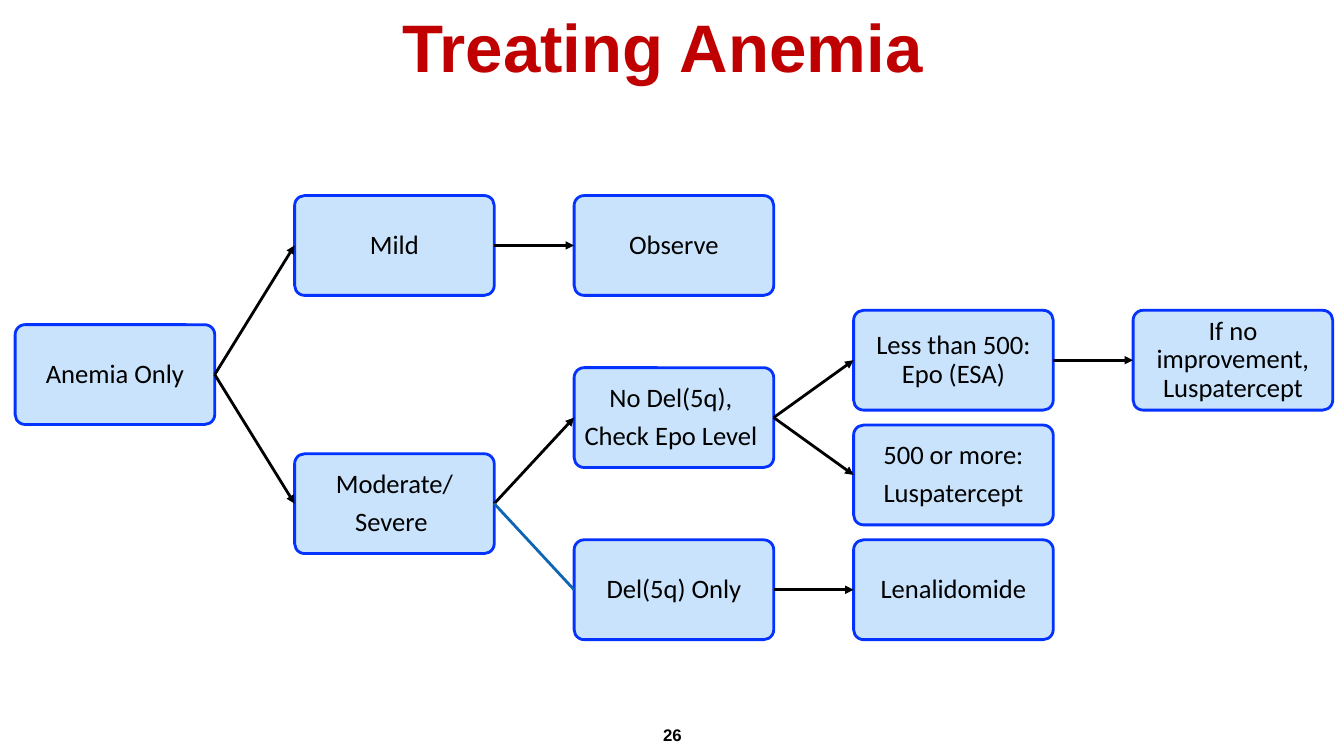
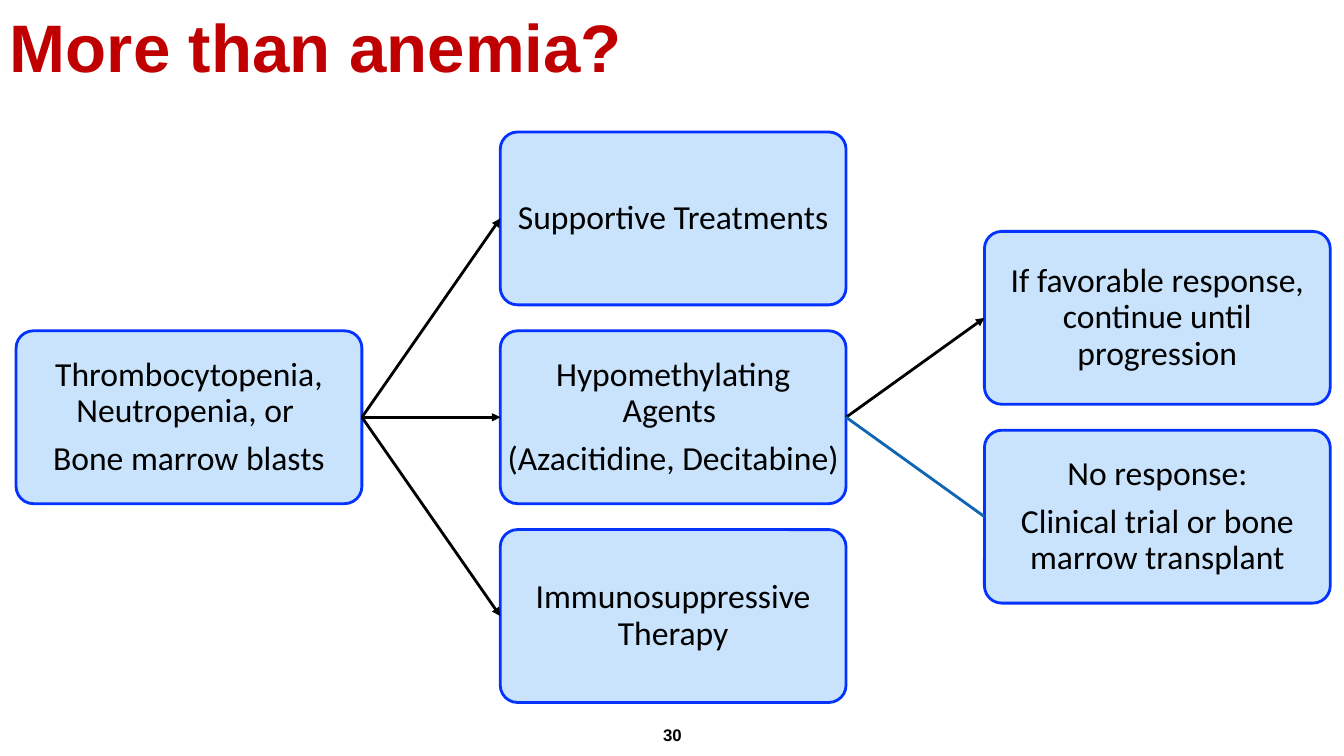
from lxml import etree
from pptx import Presentation
from pptx.dml.color import RGBColor
from pptx.enum.shapes import MSO_CONNECTOR, MSO_SHAPE
from pptx.enum.text import MSO_ANCHOR, PP_ALIGN
from pptx.oxml.ns import qn
from pptx.util import Inches, Pt

RED = RGBColor(0xC0, 0x00, 0x00)
BLACK = RGBColor(0x00, 0x00, 0x00)
BOX_FILL = RGBColor(0xC8, 0xE3, 0xFB)
BOX_EDGE = RGBColor(0x04, 0x32, 0xFF)
BLUE = RGBColor(0x0E, 0x65, 0xB4)

LEFT, RIGHT = 1, 3  # connection sites of a box


def write(tf, text, size, font="Arial", color=BLACK, bold=False,
          align=PP_ALIGN.CENTER, anchor=MSO_ANCHOR.MIDDLE,
          line_spacing=None, space_after=None, margin=None):
    """Fill a text frame, one paragraph per line of text."""
    tf.word_wrap = True
    tf.vertical_anchor = anchor
    if margin is not None:
        tf.margin_left = tf.margin_right = Inches(margin)
        tf.margin_top = tf.margin_bottom = Inches(margin)
    for i, line in enumerate(text.split("\n")):
        p = tf.add_paragraph() if i else tf.paragraphs[0]
        p.alignment = align
        p.line_spacing = line_spacing
        p.space_after = space_after
        r = p.add_run()
        r.text = line
        r.font.name, r.font.size, r.font.bold = font, Pt(size), bold
        r.font.color.rgb = color


class Deck:
    def __init__(self):
        self.prs = Presentation()
        self.prs.slide_width, self.prs.slide_height = Inches(13.33), Inches(7.5)
        self.s = None

    def slide(self, title, number, align):
        self.s = self.prs.slides.add_slide(self.prs.slide_layouts[6])
        self.text(title, 0, 0, 13.33, 0.91, size=48, color=RED, bold=True,
                  align=align, anchor=MSO_ANCHOR.TOP)
        self.text(number, 6.29, 7.09, 0.76, 0.4, size=12, bold=True)

    def text(self, text, x, y, w, h, **fmt):
        sp = self.s.shapes.add_textbox(Inches(x), Inches(y), Inches(w), Inches(h))
        write(sp.text_frame, text, **fmt)

    def box(self, text, x, y, w, h, size, margin):
        sp = self.s.shapes.add_shape(MSO_SHAPE.ROUNDED_RECTANGLE,
                                     Inches(x), Inches(y), Inches(w), Inches(h))
        sp.adjustments[0] = 0.1
        sp.shadow.inherit = False
        sp.fill.solid()
        sp.fill.fore_color.rgb = BOX_FILL
        sp.line.color.rgb = BOX_EDGE
        sp.line.width = Pt(2)
        write(sp.text_frame, text, size, font="Calibri", line_spacing=0.9,
              space_after=Pt(round(size * 0.35, 1)), margin=margin)
        return sp

    def link(self, start, end, arrow=True):
        """Join two boxes: a black arrow, or a plain blue line."""
        c = self.s.shapes.add_connector(MSO_CONNECTOR.STRAIGHT, 0, 0, 0, 0)
        c.begin_connect(start, RIGHT)
        c.end_connect(end, LEFT)
        c.line.width = Pt(2)
        c.line.color.rgb = BLACK if arrow else BLUE
        if arrow:
            etree.SubElement(c.line._get_or_add_ln(), qn("a:tailEnd"), type="triangle")
        etree.SubElement(c._element.spPr, qn("a:effectLst"))

    def tree(self, nodes, x, y, w, size, margin):
        """Draw nodes given as name: (column, row, text, parent, arrow)."""
        h = w / 2
        boxes = {}
        for name, (col, row, text, parent, arrow) in nodes.items():
            boxes[name] = self.box(text, x + col * 1.4 * w, y + row * 1.15 * h,
                                   w, h, size, margin)
            if parent:
                self.link(boxes[parent], boxes[name], arrow)


ANEMIA = {
    "anemia": (0, 1.125, "Anemia Only", None, False),
    "mild": (1, 0, "Mild", "anemia", True),
    "observe": (2, 0, "Observe", "mild", True),
    "severe": (1, 2.25, "Moderate/\nSevere ", "anemia", True),
    "no_del": (2, 1.5, "No Del(5q), \nCheck Epo Level ", "severe", True),
    "low_epo": (3, 1, "Less than 500: Epo (ESA)", "no_del", True),
    "no_gain": (4, 1, "If no improvement, Luspatercept", "low_epo", True),
    "high_epo": (3, 2, "500 or more:\nLuspatercept", "no_del", True),
    "del_only": (2, 3, "Del(5q) Only", "severe", False),
    "lenalidomide": (3, 3, "Lenalidomide", "del_only", True),
}

MORE_THAN_ANEMIA = {
    "low_counts": (0, 1, "Thrombocytopenia, Neutropenia, or \nBone marrow blasts",
                   None, False),
    "supportive": (1, 0, "Supportive Treatments", "low_counts", True),
    "agents": (1, 1, "Hypomethylating Agents \n(Azacitidine, Decitabine)",
               "low_counts", True),
    "response": (2, 0.5, "If favorable response, continue until progression",
                 "agents", True),
    "no_response": (2, 1.5, "No response:\nClinical trial or bone marrow transplant",
                    "agents", False),
    "immuno": (1, 2, "Immunosuppressive Therapy", "low_counts", True),
}


def main():
    deck = Deck()
    deck.slide("Treating Anemia ", "26", PP_ALIGN.CENTER)
    deck.tree(ANEMIA, x=0.15, y=1.94, w=1.98, size=19, margin=0.01)
    deck.slide("More than anemia?", "30", PP_ALIGN.LEFT)
    deck.tree(MORE_THAN_ANEMIA, x=0.16, y=1.31, w=3.43, size=24, margin=0.02)
    deck.prs.save("out.pptx")


if __name__ == "__main__":
    main()
